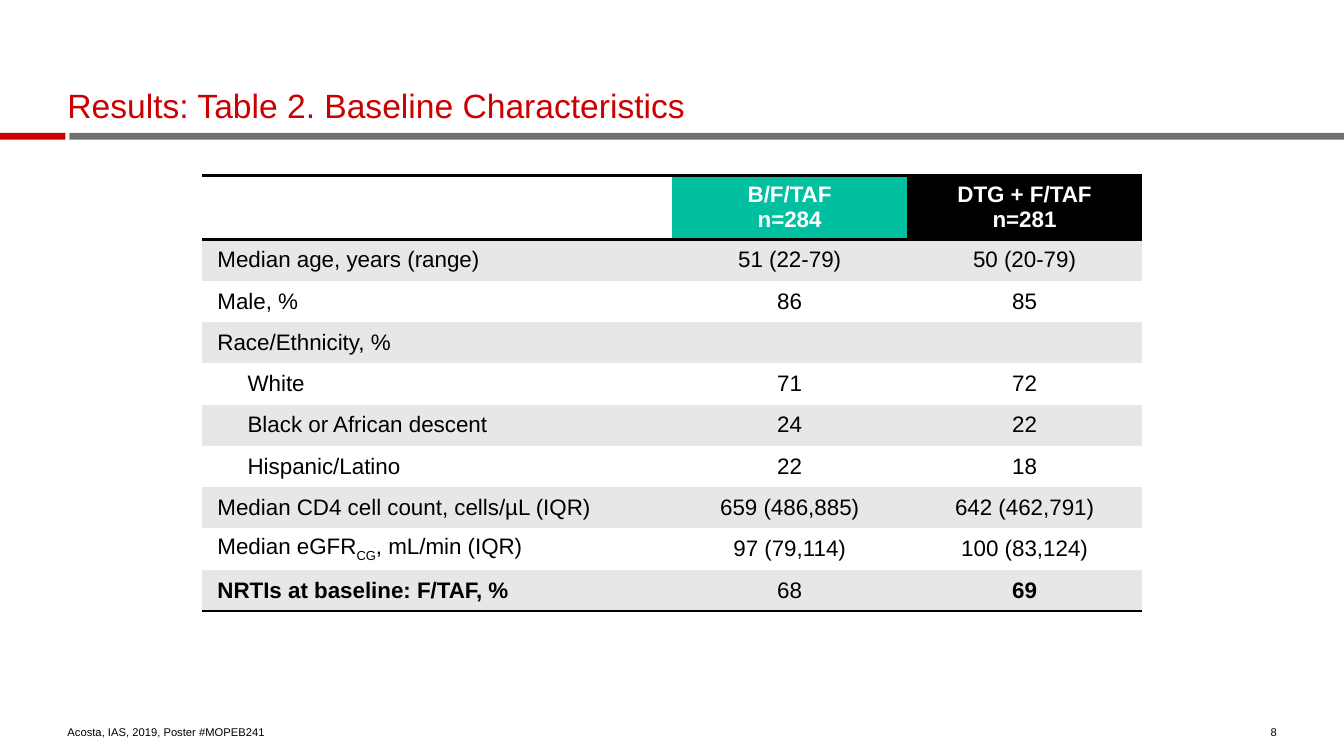
from dataclasses import dataclass

from lxml.etree import SubElement
from pptx import Presentation
from pptx.dml.color import RGBColor
from pptx.enum.shapes import MSO_SHAPE
from pptx.enum.text import MSO_ANCHOR, PP_ALIGN
from pptx.oxml.ns import qn
from pptx.slide import Slide
from pptx.table import Table, _Cell
from pptx.text.text import _Paragraph
from pptx.util import Cm, Pt


@dataclass(frozen=True)
class Theme:
    font: str = "Arial"
    red: str = "CC0000"
    gray: str = "717171"
    band: str = "E7E7E7"
    teal: str = "00C0A0"
    black: str = "000000"
    white: str = "FFFFFF"
    title_size: int = 24
    table_size: int = 16
    footer_size: int = 8
    border_width: int = 2


@dataclass(frozen=True)
class Span:
    text: str
    bold: bool = False
    subscript: bool = False


@dataclass(frozen=True)
class Bar:
    left: float
    width: float
    color: str


@dataclass(frozen=True)
class Label:
    text: str
    left: float
    top: float
    width: float
    height: float
    size: int
    color: str
    align: PP_ALIGN = PP_ALIGN.LEFT
    line_spacing: float = 1.0


@dataclass(frozen=True)
class Arm:
    name: str
    count: str
    fill: str


@dataclass(frozen=True)
class Characteristic:
    label: tuple[Span, ...]
    values: tuple[Span, ...] = ()
    indent: float = 0


THEME = Theme()
BARS = (
    Bar(1.75, 32.12, THEME.gray),
    Bar(0, 1.65, THEME.red),
)
LABELS = (
    Label("Results: Table 2. Baseline Characteristics", 1.7, 1.3, 30.48, 1.88,
          THEME.title_size, THEME.red, line_spacing=0.9),
    Label("Acosta, IAS, 2019, Poster #MOPEB241", 1.7, 18.16, 11.28, 0.46,
          THEME.footer_size, THEME.black),
    Label("8", 31.27, 18.16, 0.91, 0.46, THEME.footer_size, THEME.black, PP_ALIGN.RIGHT),
)
ARMS = (
    Arm("B/F/TAF", "n=284", THEME.teal),
    Arm("DTG + F/TAF", "n=281", THEME.black),
)
RACE_INDENT = 0.76
CHARACTERISTICS = (
    Characteristic((Span("Median age, years (range)"),), (Span("51 (22-79)"), Span("50 (20-79)"))),
    Characteristic((Span("Male, %"),), (Span("86"), Span("85"))),
    Characteristic((Span("Race/Ethnicity, %"),)),
    Characteristic((Span("White"),), (Span("71"), Span("72")), RACE_INDENT),
    Characteristic((Span("Black or African descent"),), (Span("24"), Span("22")), RACE_INDENT),
    Characteristic((Span("Hispanic/Latino"),), (Span("22"), Span("18")), RACE_INDENT),
    Characteristic((Span("Median CD4 cell count, cells/µL (IQR)"),),
                   (Span("659 (486,885)"), Span("642 (462,791)"))),
    Characteristic((Span("Median eGFR"), Span("CG", subscript=True), Span(", mL/min (IQR)")),
                   (Span("97 (79,114)"), Span("100 (83,124)"))),
    Characteristic((Span("NRTIs at baseline: F/TAF, %", bold=True),),
                   (Span("68"), Span("69", bold=True))),
)
COLUMN_WIDTHS = (11.84, 5.92, 5.92)
HEADER_HEIGHT = 1.5
ROW_HEIGHT = 1.04
NO_GRID_STYLE = "{2D5ABB26-0587-4C30-8999-92F81FD0307C}"


def add_span(paragraph: _Paragraph, span: Span, size: int, color: str) -> None:
    run = paragraph.add_run()
    run.text = span.text
    run.font.name = THEME.font
    run.font.size = Pt(size)
    run.font.bold = span.bold
    run.font.color.rgb = RGBColor.from_string(color)
    if span.subscript:
        run.font._element.set("baseline", "-25000")


def add_bar(page: Slide, bar: Bar) -> None:
    shape = page.shapes.add_shape(
        MSO_SHAPE.RECTANGLE, Cm(bar.left), Cm(3.35), Cm(bar.width), Cm(0.17))
    shape.shadow.inherit = False
    shape.fill.solid()
    shape.fill.fore_color.rgb = RGBColor.from_string(bar.color)
    shape.line.fill.background()


def add_label(page: Slide, label: Label) -> None:
    box = page.shapes.add_textbox(
        Cm(label.left), Cm(label.top), Cm(label.width), Cm(label.height))
    frame = box.text_frame
    frame.word_wrap = True
    frame.vertical_anchor = MSO_ANCHOR.BOTTOM
    frame.margin_left = frame.margin_right = frame.margin_top = frame.margin_bottom = 0
    paragraph = frame.paragraphs[0]
    paragraph.alignment = label.align
    paragraph.line_spacing = label.line_spacing
    add_span(paragraph, Span(label.text), label.size, label.color)


def prepare_cell(cell: _Cell, fill: str | None, borders: tuple[str, ...] = ()) -> None:
    """Set margins, fill and border lines; borders are tags in schema order, such as lnT, lnB."""
    cell.vertical_anchor = MSO_ANCHOR.MIDDLE
    cell.margin_left = cell.margin_right = Cm(0.38)
    cell.margin_top = cell.margin_bottom = Cm(0.13)
    properties = cell._tc.get_or_add_tcPr()
    for tag in borders:
        line = SubElement(properties, qn(f"a:{tag}"), w=str(Pt(THEME.border_width)))
        color = SubElement(SubElement(line, qn("a:solidFill")), qn("a:srgbClr"))
        color.set("val", THEME.black)
    if fill is None:
        cell.fill.background()
    else:
        cell.fill.solid()
        cell.fill.fore_color.rgb = RGBColor.from_string(fill)


def fill_header(table: Table) -> None:
    borders = ("lnT", "lnB")
    prepare_cell(table.cell(0, 0), None, borders)
    for column, arm in enumerate(ARMS, start=1):
        cell = table.cell(0, column)
        prepare_cell(cell, arm.fill, borders)
        frame = cell.text_frame
        for paragraph, text in zip((frame.paragraphs[0], frame.add_paragraph()),
                                   (arm.name, arm.count)):
            paragraph.alignment = PP_ALIGN.CENTER
            add_span(paragraph, Span(text, bold=True), THEME.table_size, THEME.white)


def fill_row(table: Table, row: int, item: Characteristic) -> None:
    fill = THEME.band if row % 2 else THEME.white
    borders = ("lnB",) if row == len(CHARACTERISTICS) else ()
    for column in range(len(COLUMN_WIDTHS)):
        prepare_cell(table.cell(row, column), fill, borders)
    if not item.values:
        table.cell(row, 0).merge(table.cell(row, len(ARMS)))
    label = table.cell(row, 0).text_frame.paragraphs[0]
    if item.indent:
        properties = label._p.get_or_add_pPr()
        properties.set("marL", str(Cm(item.indent)))
        properties.set("indent", "0")
    for span in item.label:
        add_span(label, span, THEME.table_size, THEME.black)
    for column, value in enumerate(item.values, start=1):
        paragraph = table.cell(row, column).text_frame.paragraphs[0]
        paragraph.alignment = PP_ALIGN.CENTER
        add_span(paragraph, value, THEME.table_size, THEME.black)


def add_baseline_table(page: Slide) -> None:
    row_count = len(CHARACTERISTICS) + 1
    height = HEADER_HEIGHT + ROW_HEIGHT * len(CHARACTERISTICS)
    table = page.shapes.add_table(row_count, len(COLUMN_WIDTHS), Cm(5.1), Cm(4.42),
                                  Cm(sum(COLUMN_WIDTHS)), Cm(height)).table
    table._tbl.tblPr.find(qn("a:tableStyleId")).text = NO_GRID_STYLE
    for column, width in zip(table.columns, COLUMN_WIDTHS):
        column.width = Cm(width)
    for index, row in enumerate(table.rows):
        row.height = Cm(ROW_HEIGHT if index else HEADER_HEIGHT)
    fill_header(table)
    for index, item in enumerate(CHARACTERISTICS, start=1):
        fill_row(table, index, item)


def main() -> None:
    deck = Presentation()
    deck.slide_width, deck.slide_height = Cm(33.87), Cm(19.05)
    page = deck.slides.add_slide(deck.slide_layouts[6])
    for bar in BARS:
        add_bar(page, bar)
    for label in LABELS:
        add_label(page, label)
    add_baseline_table(page)
    deck.save("out.pptx")


if __name__ == "__main__":
    main()
